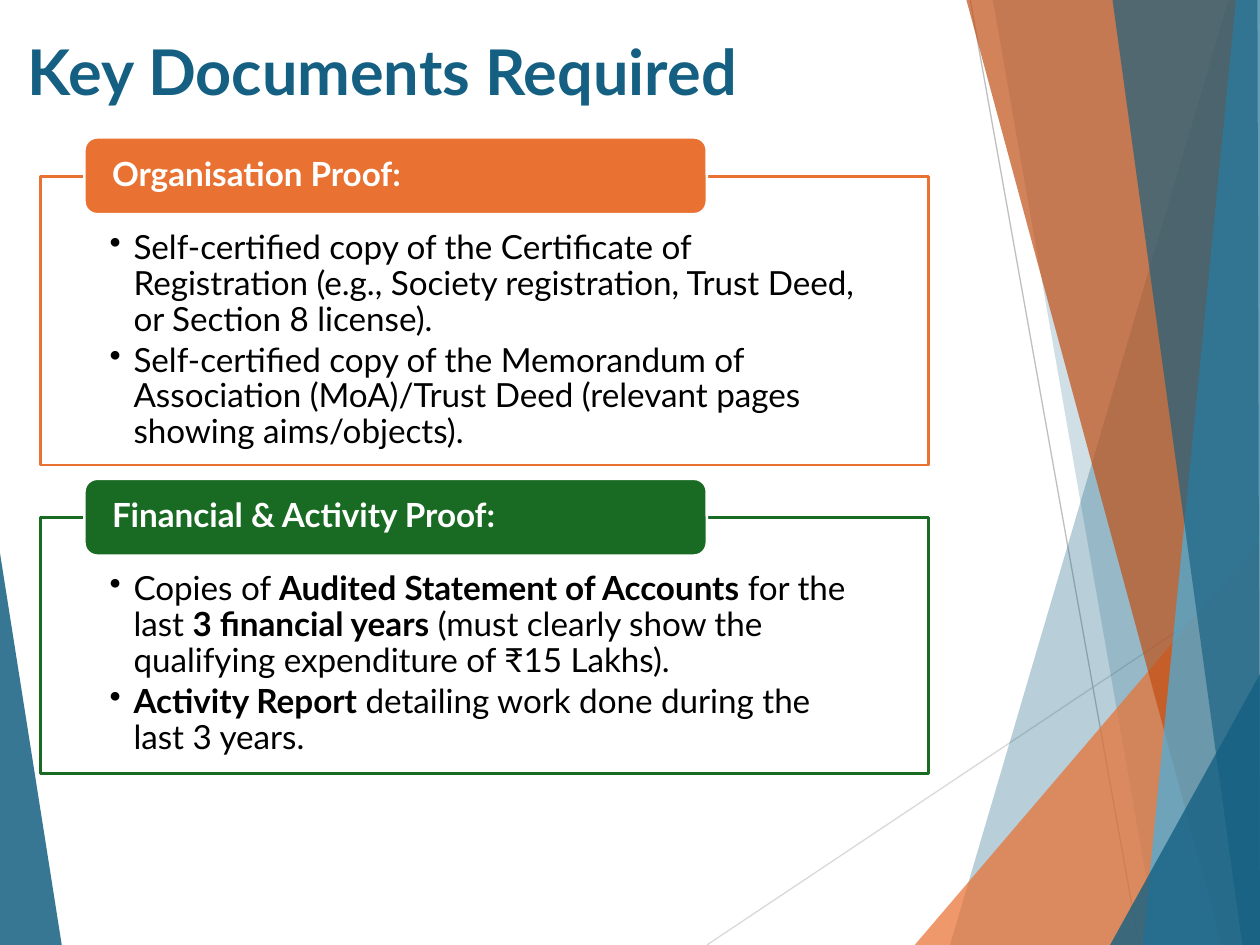
from lxml import etree
from pptx import Presentation
from pptx.dml.color import RGBColor
from pptx.enum import shapes, text
from pptx.oxml.ns import qn
from pptx.util import Inches, Pt

FONT = "Lato"
BLUE = RGBColor(0x15, 0x60, 0x82)
SKY = RGBColor(0x46, 0xB1, 0xE1)
ORANGE = RGBColor(0xE9, 0x71, 0x32)
RUST = RGBColor(0xC0, 0x4F, 0x15)
GREEN = RGBColor(0x19, 0x6B, 0x24)
PALE_GREY = RGBColor(0xD9, 0xD9, 0xD9)
GREY = RGBColor(0xBF, 0xBF, 0xBF)
WHITE = RGBColor(0xFF, 0xFF, 0xFF)
BLACK = RGBColor(0, 0, 0)

# Each facet: corners, colour, opacity in percent; listed back to front
LEFT_FACET = ([(0, 4.39), (0.49, 7.5), (0, 7.5)], BLUE, 85)
RIGHT_FACETS = [
    ([(9.75, 0), (7.54, 7.5), (10, 7.5), (10, 0)], BLUE, 30),
    ([(7.88, 0), (9.19, 7.5), (10, 7.5), (10, 0)], BLUE, 20),
    ([(7.26, 7.5), (10, 4.29), (10, 7.5)], ORANGE, 72),
    ([(7.67, 0), (9.7, 7.5), (10, 7.5), (10, 0)], RUST, 70),
    ([(9.81, 0), (9.07, 7.5), (10, 7.5), (10, 0)], SKY, 70),
    ([(8.83, 0), (9.86, 7.5), (10, 7.5), (9.98, 0)], BLUE, 65),
    ([(8.81, 7.5), (10, 5.35), (10, 7.5)], BLUE, 80),
]

# Each section: heading, colour, frame top, frame height, bullets.
# A bullet is a list of (words, bold) pieces.
SECTIONS = [
    ("Organisation Proof:", ORANGE, 1.4, 2.29, [
        [("Self-certified copy of the Certificate of Registration (e.g., Society "
          "registration, Trust Deed, or Section 8 license).", False)],
        [("Self-certified copy of the Memorandum of Association (MoA)/Trust Deed "
          "(relevant pages showing aims/objects).", False)],
    ]),
    ("Financial & Activity Proof:", GREEN, 4.11, 2.03, [
        [("Copies of ", False), ("Audited Statement of Accounts", True),
         (" for the last ", False), ("3 financial years", True),
         (" (must clearly show the qualifying expenditure of ₹15 Lakhs).", False)],
        [("Activity Report", True),
         (" detailing work done during the last 3 years.", False)],
    ]),
]


def fill_solid(shape, color, opacity=100):
    shape.shadow.inherit = False
    shape.fill.solid()
    shape.fill.fore_color.rgb = color
    if opacity < 100:
        srgb = shape.fill._xPr.find(qn("a:solidFill")).find(qn("a:srgbClr"))
        etree.SubElement(srgb, qn("a:alpha"), val=str(opacity * 1000))


def add_facet(slide, corners, color, opacity):
    points = [(Inches(x), Inches(y)) for x, y in corners]
    builder = slide.shapes.build_freeform(*points[0])
    builder.add_line_segments(points[1:])
    facet = builder.convert_to_shape()
    fill_solid(facet, color, opacity)
    facet.line.fill.background()


def add_hairline(slide, x1, y1, x2, y2, color):
    hairline = slide.shapes.add_connector(
        shapes.MSO_CONNECTOR.STRAIGHT, Inches(x1), Inches(y1), Inches(x2), Inches(y2))
    hairline.line.color.rgb = color
    hairline.line.width = Pt(0.75)
    etree.SubElement(hairline._element.spPr, qn("a:effectLst"))


def add_box(slide, preset, left, top, width, height, color, line_color, opacity=100):
    box = slide.shapes.add_shape(
        preset, Inches(left), Inches(top), Inches(width), Inches(height))
    fill_solid(box, color, opacity)
    box.line.color.rgb = line_color
    box.line.width = Pt(1.5)
    return box


def set_frame(frame, insets, anchor):
    frame.word_wrap = True
    frame.vertical_anchor = anchor
    (frame.margin_left, frame.margin_top,
     frame.margin_right, frame.margin_bottom) = map(Inches, insets)


def style_paragraph(paragraph, size, color, bold):
    paragraph.alignment = text.PP_ALIGN.LEFT
    paragraph.line_spacing = 0.9
    font = paragraph.font
    font.name, font.size, font.bold = FONT, Pt(size), bold
    font.color.rgb = color


def add_bullet(paragraph, pieces):
    paragraph.level = 1
    paragraph.space_after = Pt(2.85)
    style_paragraph(paragraph, 19, BLACK, False)
    properties = paragraph._p.get_or_add_pPr()
    properties.set("marL", str(Inches(0.19)))
    properties.set("indent", str(-Inches(0.19)))
    bullet = etree.Element(qn("a:buChar"), char="•")
    properties.find(qn("a:defRPr")).addprevious(bullet)
    for words, bold in pieces:
        run = paragraph.add_run()
        run.text = words
        if bold:
            run.font.bold = True


def add_title(slide, words):
    title = slide.shapes.add_textbox(Inches(0.12), Inches(0.18), Inches(7.05), Inches(0.83))
    set_frame(title.text_frame, (0.1, 0.05, 0.1, 0.05), text.MSO_ANCHOR.MIDDLE)
    title.text_frame.text = words
    style_paragraph(title.text_frame.paragraphs[0], 36, BLUE, True)


def add_section(slide, heading, color, top, height, bullets):
    """Outlined list with a heading tab that straddles its top edge."""
    body = add_box(slide, shapes.MSO_SHAPE.RECTANGLE, 0.32, top, 7.05, height,
                   WHITE, color, opacity=90).text_frame
    set_frame(body, (0.55, 0.43, 0.55, 0.15), text.MSO_ANCHOR.TOP)
    for index, pieces in enumerate(bullets):
        add_bullet(body.add_paragraph() if index else body.paragraphs[0], pieces)

    tab = add_box(slide, shapes.MSO_SHAPE.ROUNDED_RECTANGLE, 0.67, top - 0.31, 4.94, 0.61,
                  color, WHITE).text_frame
    set_frame(tab, (0.19, 0, 0.19, 0), text.MSO_ANCHOR.MIDDLE)
    tab.text = heading
    style_paragraph(tab.paragraphs[0], 19, WHITE, True)


def main():
    deck = Presentation()
    deck.slide_width, deck.slide_height = Inches(10), Inches(7.5)
    slide = deck.slides.add_slide(deck.slide_layouts[6])

    add_facet(slide, *LEFT_FACET)
    add_hairline(slide, 5.61, 7.5, 10, 4.57, PALE_GREY)
    add_hairline(slide, 7.7, 0, 9.04, 7.5, GREY)
    for facet in RIGHT_FACETS:
        add_facet(slide, *facet)

    add_title(slide, "Key Documents Required")
    for section in SECTIONS:
        add_section(slide, *section)

    deck.save("out.pptx")


if __name__ == "__main__":
    main()
